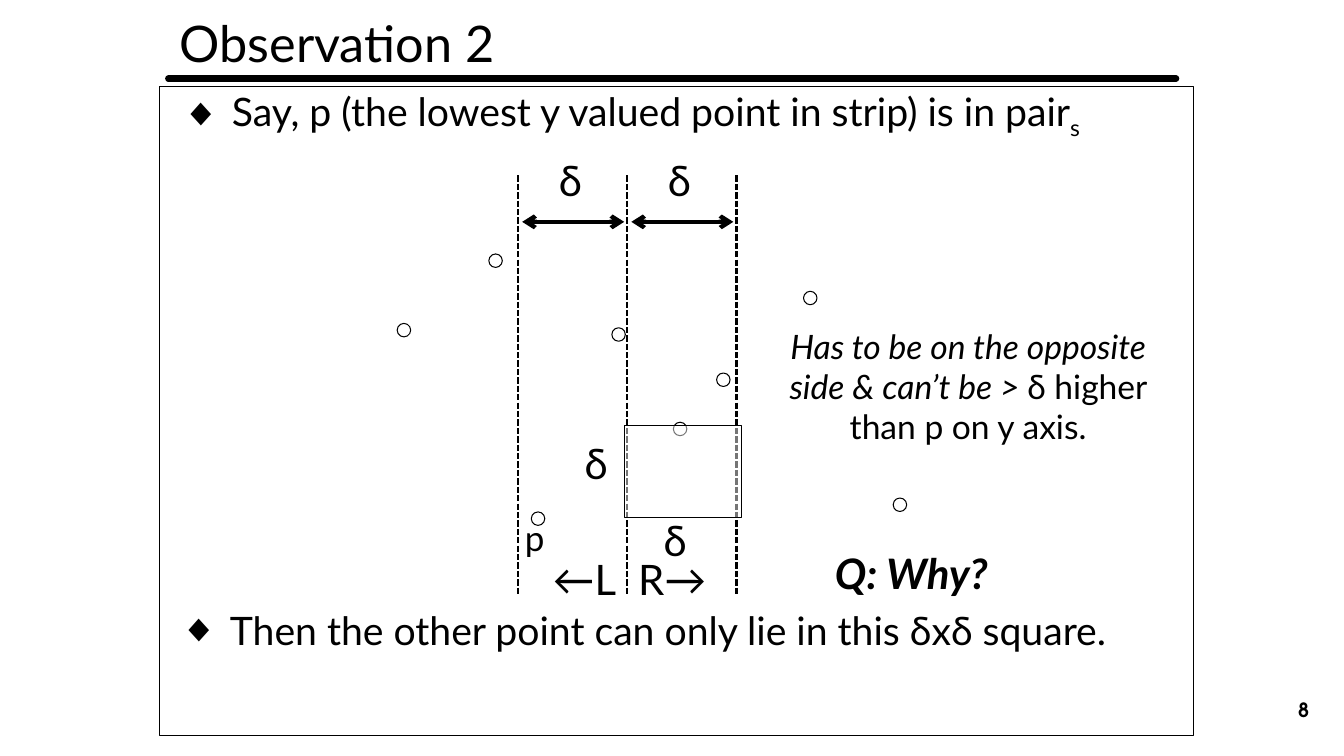
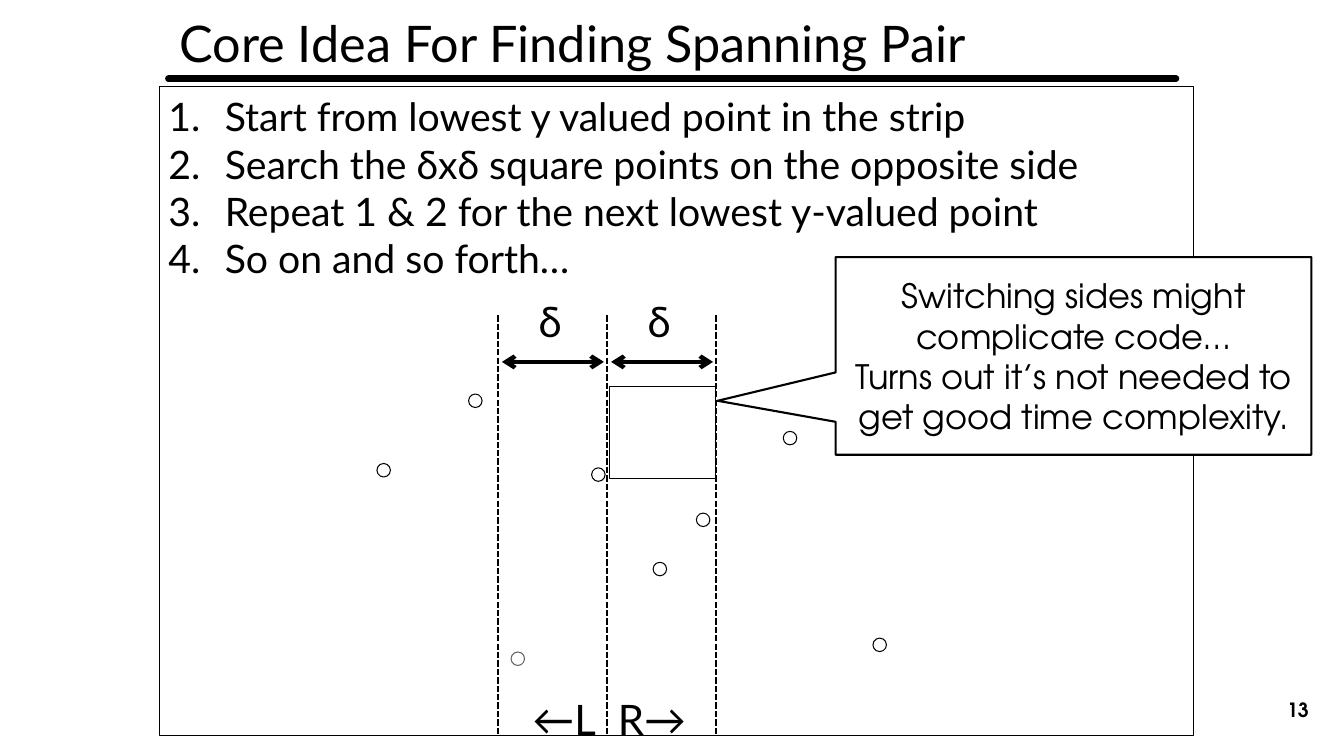
from dataclasses import dataclass

from lxml.etree import SubElement
from pptx import Presentation
from pptx.dml.color import RGBColor
from pptx.enum.dml import MSO_LINE_DASH_STYLE as Dash
from pptx.enum.shapes import MSO_CONNECTOR as Connector, MSO_SHAPE as Preset
from pptx.enum.text import MSO_ANCHOR as Anchor, MSO_AUTO_SIZE as AutoSize, PP_ALIGN as Align
from pptx.oxml.ns import qn
from pptx.util import Cm, Pt

BLACK, WHITE = "000000", "FFFFFF"
BODY_FONT, ACCENT_FONT = "Lato", "TeX Gyre Adventor"
LABEL_SIZE, LIST_SIZE = 30, 28
LABEL_HEIGHT = 1.55

# Strip geometry, in centimetres
BAND = 2.75
STRIP_HEIGHT = 10.57
DOT = 0.34
POINTS = [(7.19, 2.92), (2.36, 3.84), (9.45, 8.13), (-3.05, 3.73),
          (-0.74, 1.98), (5, 4.98), (3.91, 6.22)]
LOWEST_POINT = (0.33, 8.48)


@dataclass
class Box:
    left: float
    top: float
    width: float
    height: float

    def inside(self, left, top, width, height):
        """Return a box whose corner is measured from this one."""
        return Box(self.left + left, self.top + top, width, height)

    def lengths(self):
        return Cm(self.left), Cm(self.top), Cm(self.width), Cm(self.height)


PAGE = Box(0, 0, 33.87, 19.05)
FRAME = PAGE.inside(4.01, 2.18, 26.06, 16.36)


# Formatting helpers
def color(value):
    return RGBColor.from_string(value)


def set_alpha(fill_owner, percent):
    for node in fill_owner.iter(qn("a:srgbClr")):
        SubElement(node, qn("a:alpha"), val=str(percent * 1000))


def add_run(paragraph, text, size, font=BODY_FONT, bold=False, italic=False):
    run = paragraph.add_run()
    run.text = text
    run.font.name = font
    run.font.size = Pt(size)
    run.font.bold = bold
    run.font.italic = italic
    run.font.color.rgb = color(BLACK)
    return run


def set_frame(text_frame, anchor=Anchor.TOP):
    text_frame.word_wrap = True
    text_frame.auto_size = AutoSize.NONE
    text_frame.vertical_anchor = anchor
    return text_frame


def add_text(slide, box, runs, align=Align.CENTER, anchor=Anchor.TOP):
    """Add a one-paragraph text box; each run is (text, size, options)."""
    shape = slide.shapes.add_textbox(*box.lengths())
    paragraph = set_frame(shape.text_frame, anchor).paragraphs[0]
    paragraph.alignment = align
    for text, size, options in runs:
        add_run(paragraph, text, size, **options)


def add_label(slide, box, text, align=Align.CENTER, size=LABEL_SIZE, **options):
    add_text(slide, box, [(text, size, options)], align)


def add_outlined(slide, preset, box, width=0.75):
    shape = slide.shapes.add_shape(preset, *box.lengths())
    shape.shadow.inherit = False
    shape.fill.solid()
    shape.fill.fore_color.rgb = color(WHITE)
    shape.line.color.rgb = color(BLACK)
    shape.line.width = Pt(width)
    return shape


def add_line(slide, x1, y1, x2, y2, width, dash=None, arrows=False, cap=None):
    connector = slide.shapes.add_connector(
        Connector.STRAIGHT, Cm(x1), Cm(y1), Cm(x2), Cm(y2))
    connector.line.color.rgb = color(BLACK)
    connector.line.width = Pt(width)
    if dash:
        connector.line.dash_style = dash
    properties = connector._element.spPr
    outline = properties.find(qn("a:ln"))
    if cap:
        outline.set("cap", cap)
    if arrows:
        for end in ("a:headEnd", "a:tailEnd"):
            SubElement(outline, qn(end), type="arrow")
    SubElement(properties, qn("a:effectLst"))


# Parts common to the slides
def place(placeholder, box):
    placeholder.left, placeholder.top, placeholder.width, placeholder.height = box.lengths()
    return set_frame(placeholder.text_frame)


def add_list(placeholder, box, items, indent, bullet, **attributes):
    """Fill a body placeholder; each item is a list of (text, baseline)."""
    text_frame = place(placeholder, box)
    for index, item in enumerate(items):
        paragraph = text_frame.add_paragraph() if index else text_frame.paragraphs[0]
        paragraph.alignment = Align.LEFT
        paragraph.space_before = Pt(0)
        for text, baseline in item:
            run = add_run(paragraph, text, LIST_SIZE)
            if baseline:
                run._r.get_or_add_rPr().set("baseline", str(baseline * 1000))
        properties = paragraph._p.get_or_add_pPr()
        properties.set("marL", str(Cm(indent)))
        properties.set("indent", str(-Cm(indent)))
        SubElement(properties, qn(bullet), **attributes)


def start_slide(presentation, layout_index, title, number):
    slide = presentation.slides.add_slide(presentation.slide_layouts[layout_index])
    # Content frame, behind everything else
    frame = add_outlined(slide, Preset.FLOWCHART_PROCESS, FRAME)
    slide.shapes._spTree.insert(2, frame._element)
    # Title and rule
    paragraph = place(slide.shapes.title, PAGE.inside(4.27, 0.18, 25.3, 1.8)).paragraphs[0]
    paragraph.alignment = Align.LEFT
    add_run(paragraph, title, 36)
    add_line(slide, 4.24, 1.98, 29.64, 1.98, 4.5, cap="rnd")
    # Slide number
    add_text(slide, PAGE.inside(31.72, 17.37, 1.52, 1.02),
             [(number, 14, {"font": ACCENT_FONT, "bold": True})],
             Align.RIGHT, Anchor.MIDDLE)
    return slide


def add_dot(slide, strip, point):
    return add_outlined(slide, Preset.OVAL, strip.inside(*point, DOT, DOT))


def add_strip(slide, strip):
    for point in POINTS:
        add_dot(slide, strip, point)
    # Dashed borders
    for index in range(3):
        x = strip.left + index * BAND
        add_line(slide, x, strip.top, x, strip.top + strip.height, 1.5, Dash.SQUARE_DOT)
    # Width of each half
    for index in range(2):
        x = index * BAND
        add_label(slide, strip.inside(x + 0.3, -0.64, 2.03, LABEL_HEIGHT), "δ")
        y = strip.top + 1.17
        add_line(slide, strip.left + x + 0.1, y, strip.left + x + 2.67, y, 3, arrows=True)
    # Side names
    add_label(slide, strip.inside(-1.9, 9.4, 4.62, LABEL_HEIGHT), "←L", Align.RIGHT)
    add_label(slide, strip.inside(2.77, 9.4, 4.62, LABEL_HEIGHT), "R→", Align.LEFT)


def add_square(slide, box):
    square = add_outlined(slide, Preset.RECTANGLE, box)
    set_alpha(square._element.spPr.find(qn("a:solidFill")), 46)


def add_callout(slide, box, lines):
    callout = add_outlined(slide, Preset.RECTANGULAR_CALLOUT, box, 1.5)
    callout.adjustments[0] = -0.748
    callout.adjustments[1] = 0.227
    text_frame = set_frame(callout.text_frame, Anchor.MIDDLE)
    for index, line in enumerate(lines):
        paragraph = text_frame.add_paragraph() if index else text_frame.paragraphs[0]
        paragraph.alignment = Align.CENTER
        add_run(paragraph, line, 24, ACCENT_FONT)


# Slides
def build_observation(presentation):
    slide = start_slide(presentation, 3, "Observation 2", "8")
    bullets = [
        (0.31, -0.1, [("Say, p (the lowest y valued point in strip) is in pair", 0), ("s", -25)]),
        (0.26, 12.98, [("Then the other point can only lie in this δxδ square.", 0)]),
    ]
    for index, (left, top, item) in enumerate(bullets, start=1):
        add_list(slide.placeholders[index], FRAME.inside(left, top, 25.32, 1.45),
                 [item], 1.27, "a:buChar", char="◆")

    strip = FRAME.inside(9.05, 2.24, 2 * BAND, STRIP_HEIGHT)
    add_strip(slide, strip)
    add_dot(slide, strip, LOWEST_POINT)
    add_label(slide, strip.inside(-0.08, 8.48, 1.57, 1.32), "p", Align.LEFT, 25)

    # Square with its sides
    for left, top in [(0.95, 6.48), (2.94, 8.41)]:
        add_label(slide, strip.inside(left, top, 2.03, LABEL_HEIGHT), "δ")
    add_square(slide, strip.inside(2.69, 6.3, 2.95, 2.31))

    # Remarks
    add_label(slide, FRAME.inside(15.01, 11.49, 7.9, LABEL_HEIGHT), "Q: Why?",
              bold=True, italic=True)
    add_text(slide, FRAME.inside(14.94, 5.9, 10.9, 3.33),
             [("Has to be on the opposite side & can’t be > ", 24, {"italic": True}),
              ("δ higher than p on y axis.", 24, {})])


def build_core_idea(presentation):
    slide = start_slide(presentation, 1, "Core Idea For Finding Spanning Pair", "13")
    steps = ["Start from lowest y valued point in the strip",
             "Search the δxδ square points on the opposite side",
             "Repeat 1 & 2 for the next lowest y-valued point",
             "So on and so forth…"]
    add_list(slide.placeholders[1], FRAME.inside(-0.02, 0.03, 25.32, 5.05),
             [[(step, 0)] for step in steps], 1.42, "a:buAutoNum", type="arabicPeriod")

    strip = FRAME.inside(8.54, 5.77, 2 * BAND, STRIP_HEIGHT)
    add_strip(slide, strip)
    visited = add_dot(slide, strip, LOWEST_POINT)
    set_alpha(visited._element.spPr.find(qn("a:ln")), 62)
    add_square(slide, strip.inside(2.8, 1.8, 2.69, 2.31))
    add_callout(slide, FRAME.inside(17.05, 4.3, 11.99, 4.98),
                ["Switching sides might complicate code…",
                 "Turns out it’s not needed to get good time complexity."])


def main():
    presentation = Presentation()
    presentation.slide_width = Cm(PAGE.width)
    presentation.slide_height = Cm(PAGE.height)
    build_observation(presentation)
    build_core_idea(presentation)
    presentation.save("out.pptx")


if __name__ == "__main__":
    main()
